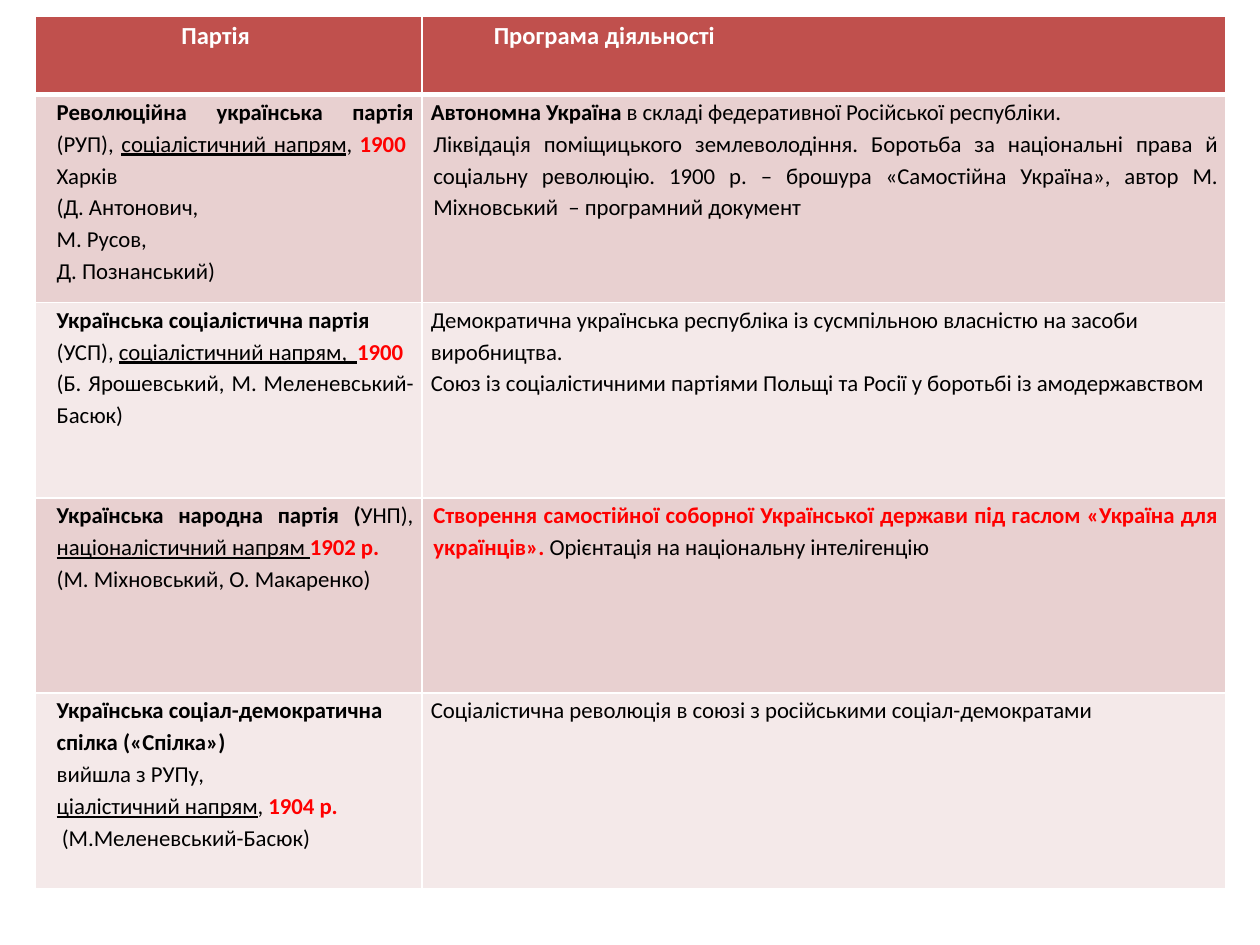
import pptx
import pptx.dml.color
import pptx.enum.text
import pptx.oxml
import pptx.oxml.ns
import pptx.util

WIDTH, HEIGHT = 10, 7.5
COLUMNS = [3.07, 6.38]
ROWS = [0.62, 1.65, 1.55, 1.55, 1.55]
COLORS = {
    "header": "C0504D",
    "dark band": "E8D0D0",
    "light band": "F4E9E9",
    "white": "FFFFFF",
    "black": "000000",
    "red": "FF0000",
}
STYLES = {
    "header": (14, "white", True, False),
    "plain": (13, "black", False, False),
    "bold": (13, "black", True, False),
    "underline": (13, "black", False, True),
    "red": (13, "red", True, False),
}
JUSTIFY = pptx.enum.text.PP_ALIGN.JUSTIFY
LEFT = pptx.enum.text.PP_ALIGN.LEFT
PARTY = (JUSTIFY, 0.1, 0)
PARTY_LEFT = (LEFT, 0.1, 0)
PROGRAM = (JUSTIFY, 0.02, 0)
PROGRAM_LEFT = (LEFT, 0, 0)
HANGING = (LEFT, 0.5, -0.5)

CONTENT = [
    [
        [((JUSTIFY, 0.5, 0.59), [("Партія ", "header")])],
        [((JUSTIFY, 0.5, 0), [("Програма діяльності", "header")])],
    ],
    [
        [
            (PARTY, [("Революційна українська партія ", "bold"), ("(РУП), ", "plain"),
                     ("соціалістичний напрям", "underline"), (", ", "plain"),
                     ("1900  ", "red"), ("Харків", "plain")]),
            (PARTY, [("(Д. Антонович,", "plain")]),
            (PARTY, [("М. Русов,", "plain")]),
            (PARTY, [("Д. Познанський)", "plain")]),
        ],
        [
            (HANGING, [("Автономна Україна ", "bold"),
                       ("в складі федеративної Російської республіки.", "plain")]),
            (PROGRAM, [("Ліквідація поміщицького землеволодіння. Боротьба за національні права "
                        "й соціальну революцію. 1900 р. – брошура «Самостійна Україна», автор "
                        "М. Міхновський  – програмний документ", "plain")]),
        ],
    ],
    [
        [
            (PARTY, [("Українська соціалістична партія", "bold")]),
            (PARTY, [("(УСП), ", "plain"), ("соціалістичний напрям,  ", "underline"),
                     ("1900", "red")]),
            (PARTY, [("(Б. Ярошевський, М. Меленевський-Басюк)", "plain")]),
        ],
        [
            (PROGRAM_LEFT, [("Демократична українська республіка із сусмпільною власністю "
                             "на засоби виробництва.", "plain")]),
            (PROGRAM_LEFT, [("Союз із соціалістичними партіями Польщі та Росії у боротьбі "
                             "із амодержавством", "plain")]),
        ],
    ],
    [
        [
            (PARTY, [("Українська народна партія (", "bold"), ("УНП), ", "plain"),
                     ("націоналістичний напрям ", "underline"), ("1902 р.", "red")]),
            (PARTY, [("(М. Міхновський, О. Макаренко)", "plain")]),
        ],
        [
            (PROGRAM, [("Створення самостійної соборної Української держави під гаслом "
                        "«Україна для українців». ", "red"),
                       ("Орієнтація на національну інтелігенцію", "plain")]),
        ],
    ],
    [
        [
            (PARTY_LEFT, [("Українська соціал-демократична спілка («Спілка»)", "bold")]),
            (PARTY_LEFT, [("вийшла з РУПу,", "plain")]),
            (PARTY_LEFT, [("ціалістичний напрям", "underline"), (", ", "plain"),
                          ("1904 р.", "red")]),
            (PARTY_LEFT, [(" (М.Меленевський-Басюк)", "plain")]),
        ],
        [
            (HANGING, [("Соціалістична революція в союзі з російськими "
                        "соціал-демократами", "plain")]),
        ],
    ],
]


def rgb(name):
    return pptx.dml.color.RGBColor.from_string(COLORS[name])


def add_borders(cell, bottom_width):
    properties = cell._tc.get_or_add_tcPr()
    for side, width in (("L", 1), ("R", 1), ("T", 1), ("B", bottom_width)):
        properties.append(pptx.oxml.parse_xml(
            f'<a:ln{side} {pptx.oxml.ns.nsdecls("a")} w="{pptx.util.Pt(width)}">'
            f'<a:solidFill><a:srgbClr val="{COLORS["white"]}"/></a:solidFill></a:ln{side}>'
        ))


def add_run(paragraph, text, style):
    size, color, bold, underline = STYLES[style]
    run = paragraph.add_run()
    run.text = text
    run.font.name = "Calibri"
    run.font.size = pptx.util.Pt(size)
    run.font.bold = bold
    run.font.underline = underline
    run.font.color.rgb = rgb(color)


def fill_paragraph(paragraph, layout, runs):
    alignment, margin, indent = layout
    paragraph.alignment = alignment
    paragraph.line_spacing = 1.15
    properties = paragraph._p.get_or_add_pPr()
    properties.set("marL", str(pptx.util.Inches(margin)))
    properties.set("indent", str(pptx.util.Inches(indent)))
    for text, style in runs:
        add_run(paragraph, text, style)


def fill_cell(cell, paragraphs, color, bottom_width):
    cell.margin_left = cell.margin_right = pptx.util.Inches(0.07)
    cell.margin_top = cell.margin_bottom = 0
    add_borders(cell, bottom_width)
    cell.fill.solid()
    cell.fill.fore_color.rgb = rgb(color)
    for index, (layout, runs) in enumerate(paragraphs):
        frame = cell.text_frame
        paragraph = frame.add_paragraph() if index else frame.paragraphs[0]
        fill_paragraph(paragraph, layout, runs)


def add_party_table(slide):
    lengths = (0.028 * WIDTH, 0.0175 * HEIGHT, sum(COLUMNS), sum(ROWS))
    table = slide.shapes.add_table(
        len(ROWS), len(COLUMNS), *map(pptx.util.Inches, lengths)
    ).table
    table.horz_banding = False
    for column, width in zip(table.columns, COLUMNS):
        column.width = pptx.util.Inches(width)
    for index, (row, height, cells) in enumerate(zip(table.rows, ROWS, CONTENT)):
        row.height = pptx.util.Inches(height)
        band = "dark band" if index % 2 else "light band"
        color, bottom_width = (band, 1) if index else ("header", 3)
        for cell, paragraphs in zip(row.cells, cells):
            fill_cell(cell, paragraphs, color, bottom_width)


def main():
    presentation = pptx.Presentation()
    presentation.slide_width = pptx.util.Inches(WIDTH)
    presentation.slide_height = pptx.util.Inches(HEIGHT)
    slide = presentation.slides.add_slide(presentation.slide_layouts[6])
    add_party_table(slide)
    presentation.save("out.pptx")


if __name__ == "__main__":
    main()
